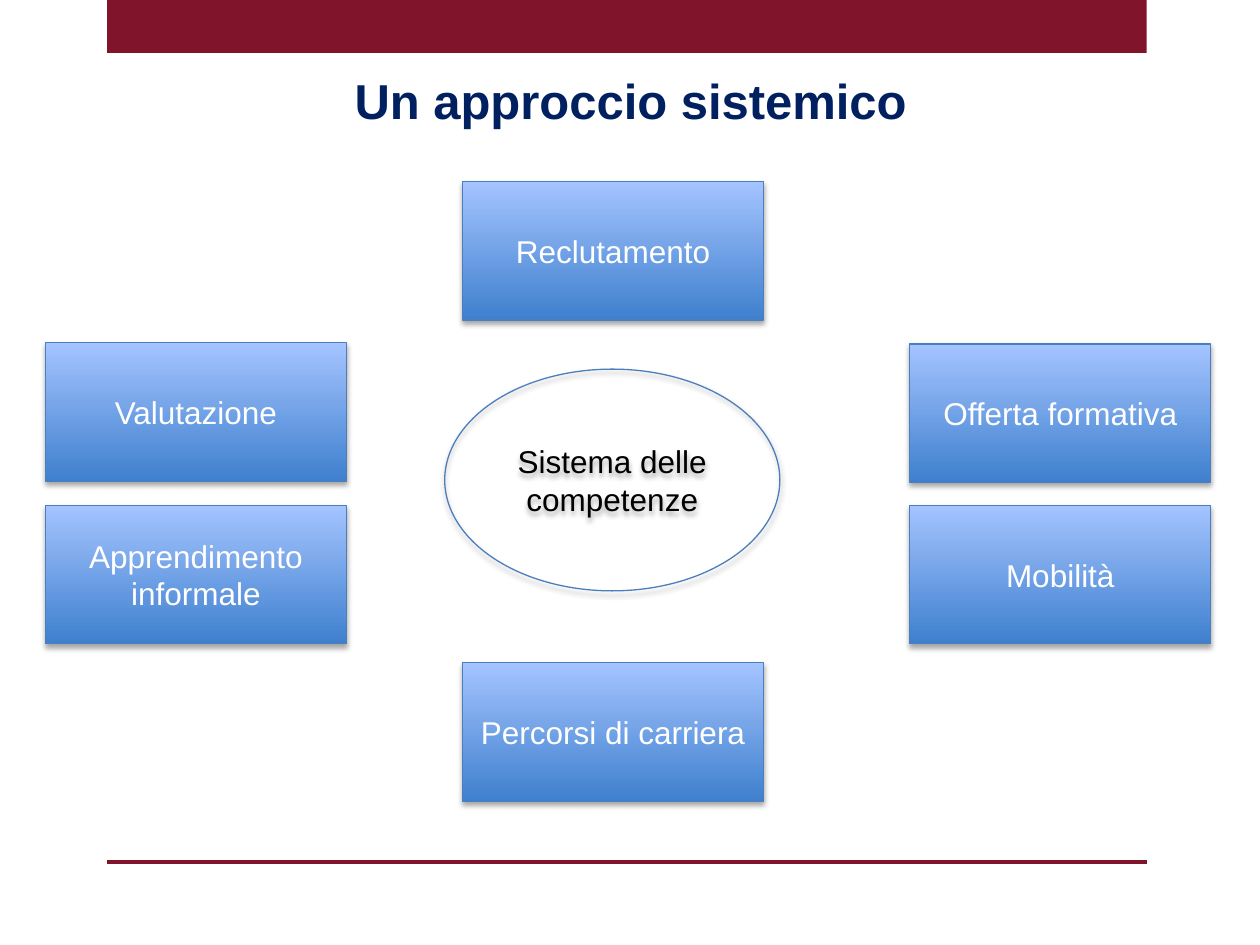
import lxml.etree
import pptx
import pptx.dml.color
import pptx.enum.shapes
import pptx.enum.text
import pptx.oxml.ns
import pptx.util

WINE, NAVY, EDGE = "7F142A", "002060", "4B7EBC"
FADE = ("3F80CE", "A4C4FF")
COLS, ROWS = 100, 75
SHAPE = pptx.enum.shapes.MSO_SHAPE
MID = pptx.enum.text.MSO_ANCHOR.MIDDLE
TOP = pptx.enum.text.MSO_ANCHOR.TOP


def hue(code):
    return pptx.dml.color.RGBColor.from_string(code)


def add(node, tag, **vals):
    return lxml.etree.SubElement(node, pptx.oxml.ns.qn(tag), **vals)


class Deck:
    font = {"name": "Arial", "size": pptx.util.Pt(18), "bold": False}

    def __init__(self):
        self.pres = pptx.Presentation()
        self.pres.slide_width = pptx.util.Inches(10)
        self.pres.slide_height = pptx.util.Inches(7.5)
        self.slide = self.pres.slides.add_slide(self.pres.slide_layouts[6])
        self.shapes = self.slide.shapes

    def place(self, x, y, w, h):
        """Turn grid columns and rows into lengths."""
        col = self.pres.slide_width / COLS
        row = self.pres.slide_height / ROWS
        return [round(n) for n in (x * col, y * row, w * col, h * row)]

    def label(self, shape, text, ink, anchor=MID, **extra):
        frame = shape.text_frame
        frame.word_wrap = True
        frame.vertical_anchor = anchor
        para = frame.paragraphs[0]
        para.alignment = pptx.enum.text.PP_ALIGN.CENTER
        run = para.add_run()
        run.text = text
        for key, val in {**self.font, **extra}.items():
            setattr(run.font, key, val)
        run.font.color.rgb = hue(ink)

    def band(self, *area):
        shape = self.shapes.add_shape(SHAPE.RECTANGLE, *self.place(*area))
        shape.shadow.inherit = False
        shape.fill.solid()
        shape.fill.fore_color.rgb = hue(WINE)
        shape.line.fill.background()

    def rule(self, x, y, w):
        left, top, wide, _ = self.place(x, y, w, 0)
        kind = pptx.enum.shapes.MSO_CONNECTOR.STRAIGHT
        line = self.shapes.add_connector(kind, left, top, left + wide, top)
        line.line.color.rgb = hue(WINE)
        line.line.width = pptx.util.Pt(2)
        add(line._element.spPr, "a:effectLst")

    def title(self, text, *area):
        box = self.shapes.add_textbox(*self.place(*area))
        self.label(box, text, NAVY, TOP, size=pptx.util.Pt(28), bold=True)

    def node(self, kind, text, area, ink):
        """Outlined shape with a soft shadow below it."""
        shape = self.shapes.add_shape(kind, *self.place(*area))
        shape.fill.background()
        shape.line.color.rgb = hue(EDGE)
        shape.line.width = pptx.util.Pt(0.75)
        shape.shadow.inherit = False
        glow = add(shape._element.spPr.find(pptx.oxml.ns.qn("a:effectLst")),
                   "a:outerShdw", blurRad="40000", dist="23000",
                   dir="5400000", rotWithShape="0")
        tint = add(glow, "a:srgbClr", val="000000")
        add(tint, "a:alpha", val="35000")
        self.label(shape, text, ink)
        return shape

    def hub(self, text, *area):
        self.node(SHAPE.OVAL, text, area, "000000")

    def card(self, text, x, y):
        shape = self.node(SHAPE.RECTANGLE, text, (x, y, 23.9, 11), "FFFFFF")
        shape.fill.gradient()
        shape.fill.gradient_angle = 90
        for stop, code, spot in zip(shape.fill.gradient_stops, FADE, (0, 1)):
            stop.color.rgb = hue(code)
            stop.position = spot


def main():
    deck = Deck()

    # Frame and title
    deck.band(8.5, 0, 82.5, 4.2)
    deck.rule(8.5, 68.4, 82.5)
    deck.title("Un approccio sistemico", 3.6, 5.1, 92.9, 5.7)

    # Hub and the cards around it
    deck.hub("Sistema delle competenze", 35.3, 29.3, 26.6, 17.6)
    left, mid, right = 3.6, 36.7, 72.2
    for text, x, y in (
        ("Reclutamento", mid, 14.4),
        ("Mobilità", right, 40.1),
        ("Offerta formativa", right, 27.3),
        ("Apprendimento informale", left, 40.1),
        ("Percorsi di carriera", mid, 52.6),
        ("Valutazione", left, 27.2),
    ):
        deck.card(text, x, y)

    deck.pres.save("out.pptx")


if __name__ == "__main__":
    main()
